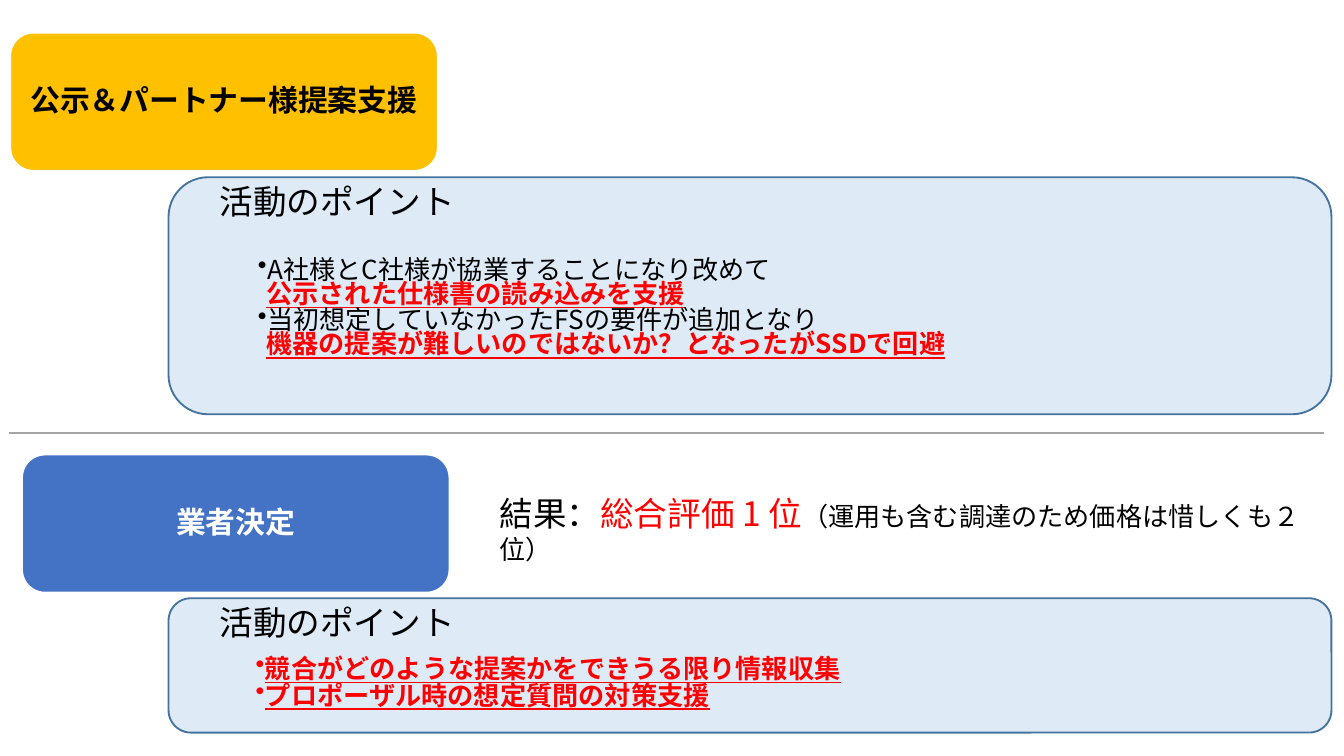
from lxml import etree
from pptx import Presentation
from pptx.dml.color import RGBColor
from pptx.enum.shapes import MSO_CONNECTOR, MSO_SHAPE
from pptx.enum.text import MSO_ANCHOR, PP_ALIGN
from pptx.oxml.ns import qn
from pptx.util import Pt

ROUNDED = MSO_SHAPE.ROUNDED_RECTANGLE
STRAIGHT = MSO_CONNECTOR.STRAIGHT
TOP, MIDDLE = MSO_ANCHOR.TOP, MSO_ANCHOR.MIDDLE
CENTER = PP_ALIGN.CENTER

FONT = "Noto Sans CJK JP"
COLORS = {
    "black": "000000",
    "white": "FFFFFF",
    "red": "FF0000",
    "amber": "FFC000",
    "blue": "4472C4",
    "panel": "DEEBF7",
    "panel_line": "43739E",
    "divider": "A5A5A5",
}


def color(name):
    return RGBColor.from_string(COLORS[name])


def add_run(paragraph, text, size, color_name="black", bold=False, underline=False):
    run = paragraph.add_run()
    run.text = text
    font = run.font
    font.size = Pt(size)
    font.name = FONT
    font.bold = bold
    font.underline = underline
    font.color.rgb = color(color_name)
    east_asian = etree.SubElement(run._r.get_or_add_rPr(), qn("a:ea"))
    east_asian.set("typeface", FONT)


def add_box(slide, left, top, width, height, fill, line):
    shape = slide.shapes.add_shape(ROUNDED, Pt(left), Pt(top), Pt(width), Pt(height))
    shape.shadow.inherit = False
    shape.fill.solid()
    shape.fill.fore_color.rgb = color(fill)
    shape.line.color.rgb = color(line)
    shape.line.width = Pt(1)
    return shape


def add_header(slide, left, top, text, fill, text_color):
    shape = add_box(slide, left, top, 229, 74, fill, "white")
    frame = shape.text_frame
    frame.vertical_anchor = MIDDLE
    paragraph = frame.paragraphs[0]
    paragraph.alignment = CENTER
    paragraph.line_spacing = 0.9
    add_run(paragraph, text, 16, text_color, bold=True)


def add_text_frame(slide, left, top, width, height):
    frame = slide.shapes.add_textbox(Pt(left), Pt(top), Pt(width), Pt(height)).text_frame
    frame.word_wrap = True
    return frame


def add_text(slide, left, top, width, runs):
    """Add a one-paragraph text box from (text, size, color) runs."""
    paragraph = add_text_frame(slide, left, top, width, 29).paragraphs[0]
    for text, size, color_name in runs:
        add_run(paragraph, text, size, color_name)


def set_bullet(paragraph):
    properties = paragraph._p.get_or_add_pPr()
    properties.set("marL", str(Pt(4.5)))
    properties.set("indent", str(-Pt(4.5)))
    etree.SubElement(properties, qn("a:buChar")).set("char", "•")


def add_bullets(slide, left, top, width, items, anchor, top_inset=0):
    """Add bullets; each item pairs a plain lead line (or None) with a stressed line."""
    frame = add_text_frame(slide, left, top, width, 55.5)
    frame.vertical_anchor = anchor
    frame.margin_left = frame.margin_right = frame.margin_bottom = 0
    frame.margin_top = Pt(top_inset)
    for index, (lead, stressed) in enumerate(items):
        paragraph = frame.add_paragraph() if index else frame.paragraphs[0]
        paragraph.line_spacing = 0.76
        paragraph.space_after = Pt(1.5)
        set_bullet(paragraph)
        if lead:
            add_run(paragraph, lead, 14)
            paragraph.add_line_break()
        add_run(paragraph, stressed, 14, "red", bold=True, underline=True)


def add_divider(slide, left, right, y):
    connector = slide.shapes.add_connector(STRAIGHT, Pt(left), Pt(y), Pt(right), Pt(y))
    connector.line.color.rgb = color("divider")
    connector.line.width = Pt(1.5)
    etree.SubElement(connector._element.spPr, qn("a:effectLst"))


def main():
    presentation = Presentation()
    presentation.slide_width, presentation.slide_height = Pt(720), Pt(405)
    slide = presentation.slides.add_slide(presentation.slide_layouts[6])

    for top, height in ((95, 127), (320.5, 72)):
        add_box(slide, 90.3, top, 623, height, "panel", "panel_line")
    for top in (93.6, 319):
        add_text(slide, 110.5, top, 231, [("活動のポイント", 18, "black")])

    add_header(slide, 5.5, 17.5, "公示＆パートナー様提案支援", "amber", "black")
    add_bullets(slide, 138.2, 132.5, 463, [
        ("A社様とC社様が協業することになり改めて", "公示された仕様書の読み込みを支援"),
        ("当初想定していなかったFSの要件が追加となり",
         "機器の提案が難しいのではないか？となったがSSDで回避"),
    ], TOP, top_inset=7)

    add_divider(slide, 5, 709.2, 232)

    add_header(slide, 11.8, 243.5, "業者決定", "blue", "white")
    add_text(slide, 260.5, 260.6, 453, [
        ("結果：", 18, "black"),
        ("総合評価 1 位", 18, "red"),
        ("（運用も含む調達のため価格は惜しくも２ 位）", 14, "black"),
    ])
    add_bullets(slide, 137, 339, 444, [
        (None, "競合がどのような提案かをできうる限り情報収集"),
        (None, "プロポーザル時の想定質問の対策支援"),
    ], MIDDLE)

    presentation.save("out.pptx")


if __name__ == "__main__":
    main()
